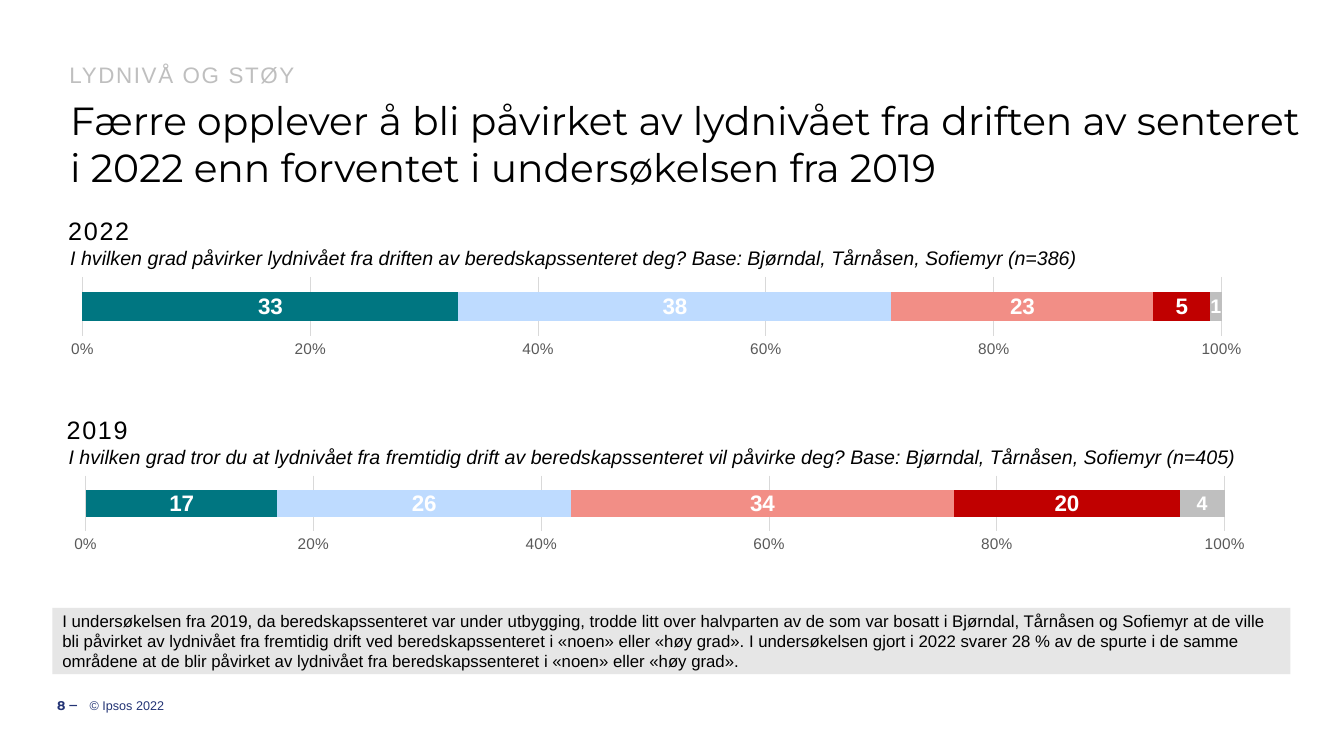
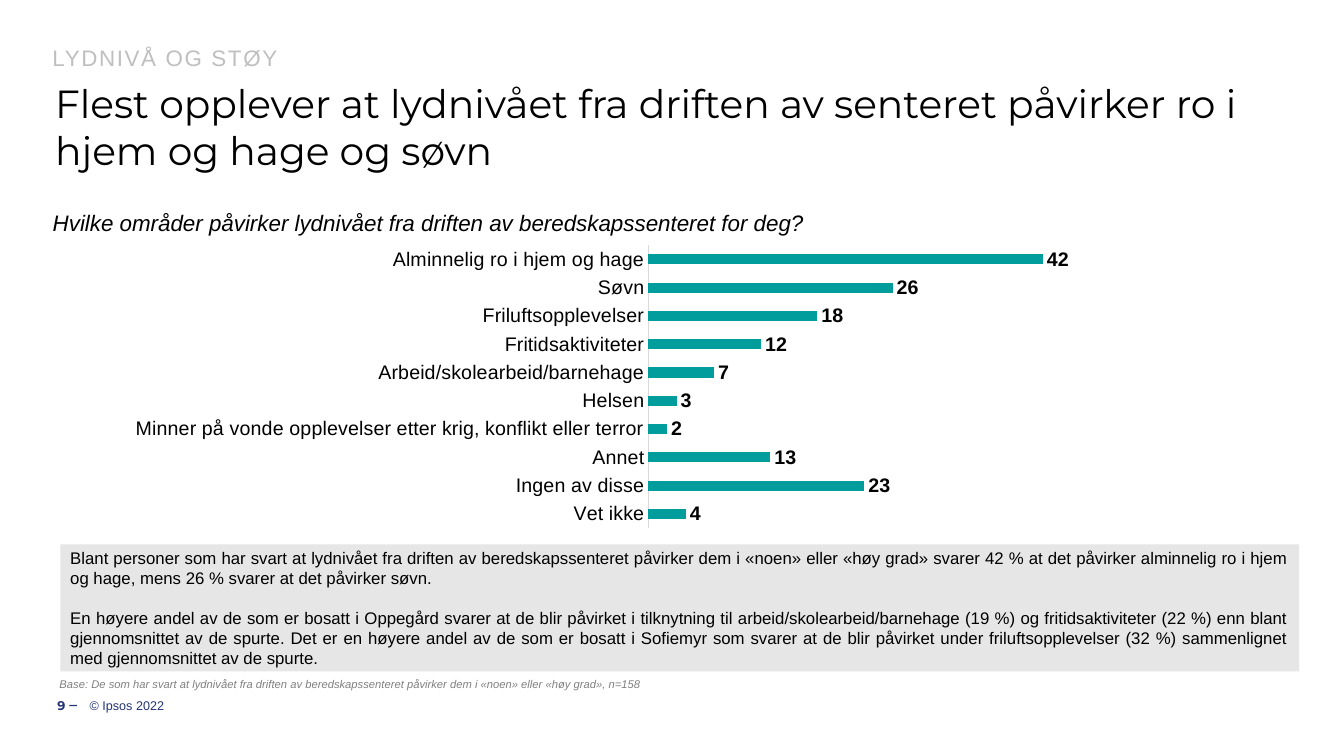
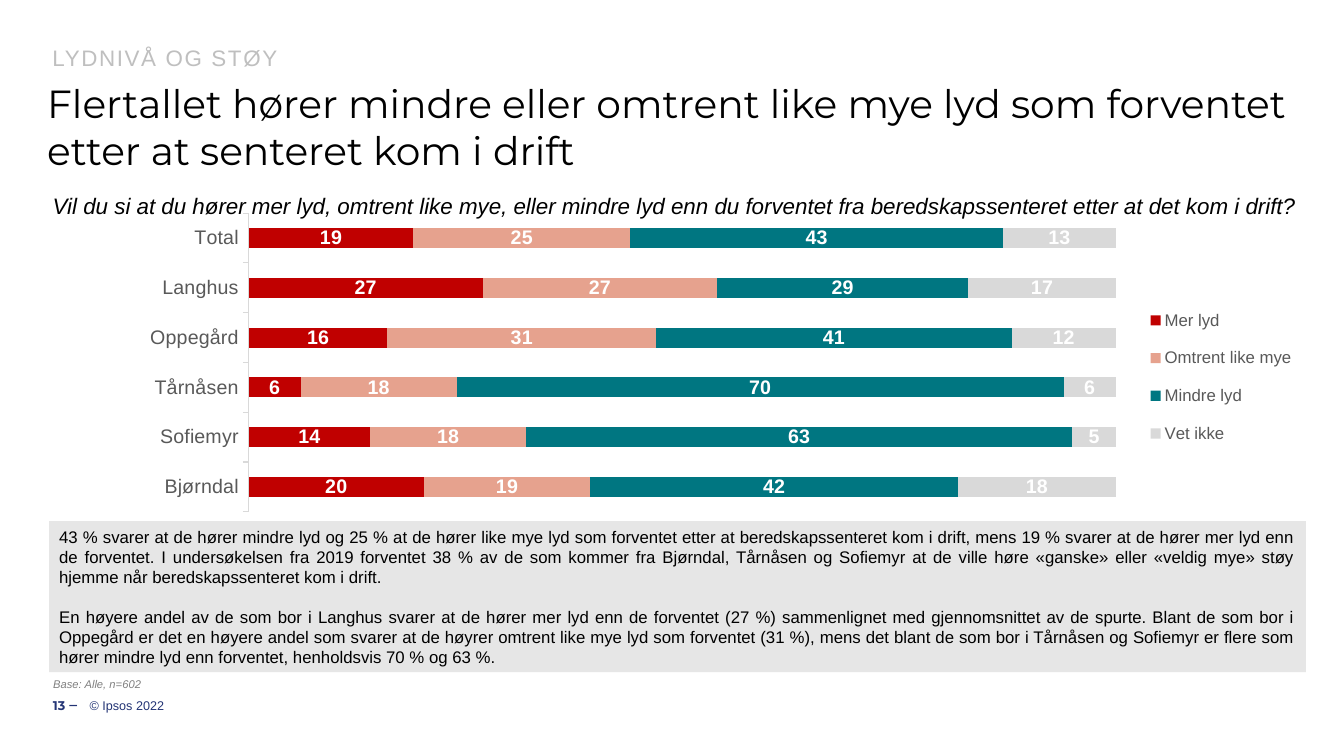
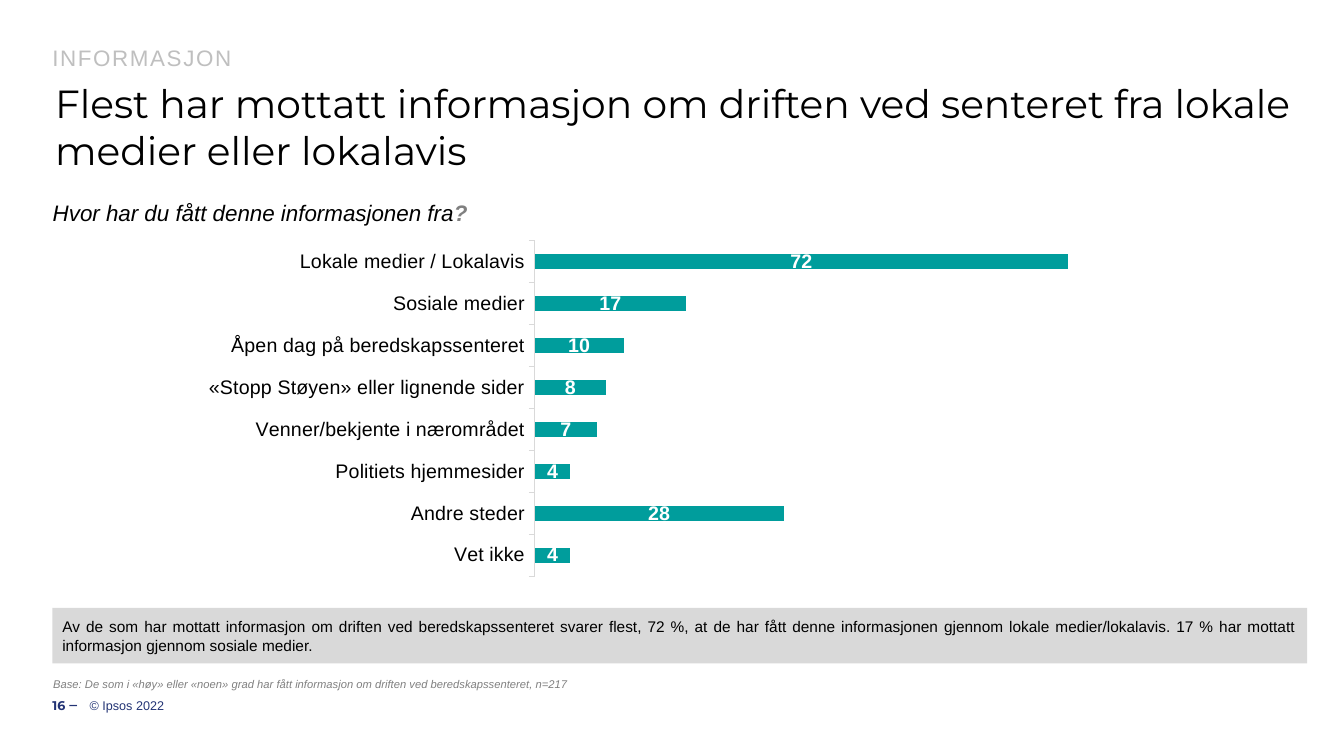
import pptx
import pptx.chart.data
import pptx.dml.color
import pptx.enum.chart
import pptx.enum.shapes
import pptx.enum.text
import pptx.oxml
import pptx.oxml.ns
import pptx.util

Cm = pptx.util.Cm
Pt = pptx.util.Pt
ALIGN = pptx.enum.text.PP_ALIGN
ANCHOR = pptx.enum.text.MSO_ANCHOR
CHART = pptx.enum.chart.XL_CHART_TYPE
LABEL = pptx.enum.chart.XL_LABEL_POSITION
TICK = pptx.enum.chart.XL_TICK_MARK

SANS, DISPLAY = "Arial", "Montserrat"
BLACK, WHITE, NAVY = "000000", "FFFFFF", "233475"
TEAL, PETROL, RED = "009D9C", "007681", "C00000"
SKY, SALMON, PEACH = "BEDBFF", "F28E86", "E6A28E"
DARK, MID, SILVER, RULE, PALE = "595959", "808080", "BFBFBF", "D9D9D9", "E6E6E6"


def rgb(value):
    return pptx.dml.color.RGBColor.from_string(value)


def style(font, size, color=BLACK, name=SANS, bold=False, italic=False):
    font.size, font.name = Pt(size), name
    font.bold, font.italic = bold, italic
    font.color.rgb = rgb(color)


def lengths(box):
    return [Cm(v) for v in box]


def fill_frame(sp, paragraphs, inset=0.25, anchor=ANCHOR.TOP,
               align=ALIGN.LEFT, gap=0, **font):
    tf = sp.text_frame
    tf.word_wrap = True
    tf.auto_size = pptx.enum.text.MSO_AUTO_SIZE.NONE
    tf.vertical_anchor = anchor
    tf.margin_left = tf.margin_right = Cm(inset)
    tf.margin_top = tf.margin_bottom = Cm(0.13)
    for i, text in enumerate(paragraphs):
        p = tf.add_paragraph() if i else tf.paragraphs[0]
        p.text = text
        p.alignment = align
        if i:
            p.space_before = Pt(gap)
        style(p.runs[0].font, **font)
    return tf.paragraphs[0]


def add_text(s, box, text, **options):
    return fill_frame(s.shapes.add_textbox(*lengths(box)), [text], **options)


def spaced_heading(s, box, text, size, color=BLACK):
    """Letter-spaced line, used above titles and panels."""
    p = add_text(s, box, text, inset=0.2, size=size, color=color)
    p.line_spacing = 0.9
    p.runs[0].font._element.set("spc", "120")


def header(s, x, y, kicker, title, title_x):
    spaced_heading(s, (x, y, 31.6, 0.86), kicker, 16, SILVER)
    sp = s.shapes.title
    sp.left, sp.top, sp.width, sp.height = lengths((title_x, y + 0.8, 31.8, 2.64))
    p = fill_frame(sp, [title], size=28, name=DISPLAY)
    p.line_spacing = 1.0


def footer(s, number):
    y, h = 17.27, 1.02
    add_text(s, (1.07, y, 0.89, h), f"{number} ‒", inset=0, anchor=ANCHOR.MIDDLE,
             align=ALIGN.RIGHT, size=9, color=NAVY, name=DISPLAY, bold=True)
    add_text(s, (2.26, y, 29.03, h), "© Ipsos 2022", inset=0,
             anchor=ANCHOR.MIDDLE, size=9, color=NAVY)


def question(s, y, text):
    return add_text(s, (1.13, y, 32.4, 0.9), text, inset=0.2, size=16, italic=True)


def base_note(s, x, text):
    add_text(s, (x, 16.92, 31.85, 0.61), text, inset=0.2, anchor=ANCHOR.BOTTOM,
             size=8, color=MID, italic=True)


def comment(s, box, paragraphs, size=12, fill=PALE, align=ALIGN.JUSTIFY):
    sp = s.shapes.add_shape(pptx.enum.shapes.MSO_SHAPE.RECTANGLE, *lengths(box))
    sp.shadow.inherit = False
    sp.fill.solid()
    sp.fill.fore_color.rgb = rgb(fill)
    sp.line.fill.background()
    fill_frame(sp, paragraphs, anchor=ANCHOR.MIDDLE, align=align, gap=14, size=size)


def set_layout(parent, index, part, box, target=""):
    """Fix a chart part at a place given in slide centimetres."""
    for old in parent.xpath("c:layout"):
        parent.remove(old)
    x, y, w, h = box
    shares = {"x": (part[0] - x) / w, "y": (part[1] - y) / h,
              "w": part[2] / w, "h": part[3] / h}
    modes = '<c:xMode val="edge"/><c:yMode val="edge"/>'
    values = "".join(f'<c:{k} val="{v:.4f}"/>' for k, v in shares.items())
    parent.insert(index, pptx.oxml.parse_xml(
        f'<c:layout {pptx.oxml.ns.nsdecls("c")}><c:manualLayout>'
        f'{target}{modes}{values}</c:manualLayout></c:layout>'))


def bar_chart(s, box, plot_box, kind, cats, series, gap, label_size=14,
              label_color=WHITE, label_pos=LABEL.CENTER):
    """Bar chart; series holds (name, values, colour) tuples."""
    data = pptx.chart.data.CategoryChartData()
    data.categories = cats
    for name, values, _ in series:
        data.add_series(name, values)
    chart = s.shapes.add_chart(kind, *lengths(box), data).chart
    chart.has_title = chart.has_legend = False
    style(chart.font, 10)
    plot = chart.plots[0]
    plot.gap_width = gap
    plot.vary_by_categories = False
    if kind != CHART.BAR_CLUSTERED:
        plot.overlap = 100
    for ser, (_, _, color) in zip(plot.series, series):
        ser.format.fill.solid()
        ser.format.fill.fore_color.rgb = rgb(color)
        labels = ser.data_labels
        labels.show_value = True
        labels.position = label_pos
        style(labels.font, label_size, label_color, bold=True)
    chart.value_axis.has_major_gridlines = False
    set_layout(chart.element.xpath("c:chart/c:plotArea")[0], 0, plot_box, box,
               '<c:layoutTarget val="inner"/>')
    return chart


def category_axis(chart, color=BLACK, tick=TICK.OUTSIDE):
    """Show the categories and hide the value axis."""
    chart.value_axis.visible = False
    axis = chart.category_axis
    axis.major_tick_mark, axis.minor_tick_mark = tick, TICK.NONE
    axis.format.line.color.rgb = rgb(RULE)
    axis.format.line.width = Pt(0.75)
    style(axis.tick_labels.font, 14, color)


def limit_values(chart):
    axis = chart.value_axis
    axis.minimum_scale, axis.maximum_scale, axis.major_unit = 0, 60, 20


def percent_axis(chart):
    """Show the value axis in percent and hide the categories."""
    chart.category_axis.visible = False
    axis = chart.value_axis
    axis.major_unit = 0.2
    axis.major_tick_mark = axis.minor_tick_mark = TICK.NONE
    axis.format.line.fill.background()
    axis.has_major_gridlines = True
    axis.major_gridlines.format.line.color.rgb = rgb(RULE)
    axis.major_gridlines.format.line.width = Pt(0.75)
    axis.tick_labels.number_format = "0%"
    axis.tick_labels.number_format_is_linked = False
    style(axis.tick_labels.font, 11, DARK)


def right_legend(chart, legend_box, box):
    chart.has_legend = True
    legend = chart.legend
    legend.position = pptx.enum.chart.XL_LEGEND_POSITION.RIGHT
    legend.include_in_layout = False
    style(legend.font, 12, DARK)
    set_layout(legend._element, 1, legend_box, box)


def year_panel(s, box, year, text, values, plot_x, plot_h):
    x, y, w, h = box
    spaced_heading(s, (x, y, w, 0.94), year, 18)
    add_text(s, (x, y + 0.69, w, 0.86), text, size=14, italic=True)
    grades = ["Ingen grad", "Liten grad", "Noen grad", "Høy grad", "Vet ikke"]
    colors = [PETROL, SKY, SALMON, RED, SILVER]
    series = [(g, [v], c) for g, v, c in zip(grades, values, colors)]
    chart = bar_chart(s, (x, y + 1.5, w, h - 1.5), (plot_x, y + 1.6, 28.71, plot_h),
                      CHART.BAR_STACKED_100, ["1"], series, 104, label_size=16)
    percent_axis(chart)
    chart.plots[0].series[4].data_labels.font.size = Pt(14)


def noise_level(s):
    header(s, 1.55, 1.5, "LYDNIVÅ OG STØY",
           "Færre opplever å bli påvirket av lydnivået fra driften av senteret "
           "i 2022 enn forventet i undersøkelsen fra 2019", 1.52)
    year_panel(s, (1.52, 5.38, 31.6, 4.6), "2022",
               "I hvilken grad påvirker lydnivået fra driften av beredskapssenteret deg? "
               "Base: Bjørndal, Tårnåsen, Sofiemyr (n=386)",
               [33, 38, 23, 5, 1], 2.08, 1.48)
    year_panel(s, (1.48, 10.39, 31.6, 4.6), "2019",
               "I hvilken grad tror du at lydnivået fra fremtidig drift av "
               "beredskapssenteret vil påvirke deg? "
               "Base: Bjørndal, Tårnåsen, Sofiemyr (n=405)",
               [17, 26, 34, 20, 4], 2.16, 1.39)
    comment(s, (1.32, 15.32, 31.2, 1.67), [
        "I undersøkelsen fra 2019, da beredskapssenteret var under utbygging, trodde "
        "litt over halvparten av de som var bosatt i Bjørndal, Tårnåsen og Sofiemyr at "
        "de ville bli påvirket av lydnivået fra fremtidig drift ved beredskapssenteret "
        "i «noen» eller «høy grad». I undersøkelsen gjort i 2022 svarer 28 % av de "
        "spurte i de samme områdene at de blir påvirket av lydnivået fra "
        "beredskapssenteret i «noen» eller «høy grad»."], align=ALIGN.LEFT)


def affected_areas(s):
    header(s, 1.12, 1.07, "LYDNIVÅ OG STØY",
           "Flest opplever at lydnivået fra driften av senteret påvirker ro i "
           "hjem og hage og søvn", 1.14)
    question(s, 5.13, "Hvilke områder påvirker lydnivået fra driften av "
                      "beredskapssenteret for deg?")
    areas = {"Vet ikke": 4, "Ingen av disse": 23, "Annet": 13,
             "Minner på vonde opplevelser etter krig, konflikt eller terror": 2,
             "Helsen": 3, "Arbeid/skolearbeid/barnehage": 7,
             "Fritidsaktiviteter": 12, "Friluftsopplevelser": 18,
             "Søvn": 26, "Alminnelig ro i hjem og hage": 42}
    chart = bar_chart(s, (1, 5.92, 29.76, 8.05), (16.34, 6.18, 14.2, 7.13),
                      CHART.BAR_CLUSTERED, list(areas),
                      [("Series 1", list(areas.values()), TEAL)], 182,
                      label_color=BLACK, label_pos=LABEL.OUTSIDE_END)
    category_axis(chart, tick=TICK.NONE)
    limit_values(chart)
    comment(s, (1.52, 13.72, 31.22, 3.2), [
        "Blant personer som har svart at lydnivået fra driften av beredskapssenteret "
        "påvirker dem i «noen» eller «høy grad» svarer 42 % at det påvirker alminnelig "
        "ro i hjem og hage, mens 26 % svarer at det påvirker søvn.",
        "En høyere andel av de som er bosatt i Oppegård svarer at de blir påvirket i "
        "tilknytning til arbeid/skolearbeid/barnehage (19 %) og fritidsaktiviteter "
        "(22 %) enn blant gjennomsnittet av de spurte. Det er en høyere andel av de som "
        "er bosatt i Sofiemyr som svarer at de blir påvirket under friluftsopplevelser "
        "(32 %) sammenlignet med gjennomsnittet av de spurte."])
    base_note(s, 1.3, "Base: De som har svart at lydnivået fra driften av "
                      "beredskapssenteret påvirker dem i «noen» eller «høy grad», n=158")


def expected_noise(s):
    header(s, 1.12, 1.07, "LYDNIVÅ OG STØY",
           "Flertallet hører mindre eller omtrent like mye lyd som forventet "
           "etter at senteret kom i drift", 0.94)
    question(s, 4.72, "Vil du si at du hører mer lyd, omtrent like mye, eller mindre lyd "
                      "enn du forventet fra beredskapssenteret etter at det kom i drift?")
    comment(s, (1.24, 13.13, 31.67, 3.81), [
        "43 % svarer at de hører mindre lyd og 25 % at de hører like mye lyd som "
        "forventet etter at beredskapssenteret kom i drift, mens 19 % svarer at de "
        "hører mer lyd enn de forventet. I undersøkelsen fra 2019 forventet 38 % av de "
        "som kommer fra Bjørndal, Tårnåsen og Sofiemyr at de ville høre «ganske» eller "
        "«veldig mye» støy hjemme når beredskapssenteret kom i drift.",
        "En høyere andel av de som bor i Langhus svarer at de hører mer lyd enn de "
        "forventet (27 %) sammenlignet med gjennomsnittet av de spurte. Blant de som "
        "bor i Oppegård er det en høyere andel som svarer at de høyrer omtrent like mye "
        "lyd som forventet (31 %), mens det blant de som bor i Tårnåsen og Sofiemyr er "
        "flere som hører mindre lyd enn forventet, henholdsvis 70 % og 63 %."])
    box = (3.2, 5.23, 29.54, 7.82)
    chart = bar_chart(s, box, (6.27, 5.37, 21.85, 7.53), CHART.BAR_STACKED_100,
                      ["Bjørndal", "Sofiemyr", "Tårnåsen", "Oppegård", "Langhus", "Total"],
                      [("Mer lyd", [20, 14, 6, 16, 27, 19], RED),
                       ("Omtrent like mye", [19, 18, 18, 31, 27, 25], PEACH),
                       ("Mindre lyd", [42, 63, 70, 41, 29, 43], PETROL),
                       ("Vet ikke", [18, 5, 6, 12, 17, 13], RULE)], 150)
    category_axis(chart, DARK)
    right_legend(chart, (28.85, 7.35, 3.85, 4.3), box)
    base_note(s, 1.14, "Base: Alle, n=602")


def information_sources(s):
    header(s, 1.12, 1.07, "INFORMASJON",
           "Flest har mottatt informasjon om driften ved senteret fra lokale "
           "medier eller lokalavis", 1.14)
    p = question(s, 4.9, "Hvor har du fått denne informasjonen fra")
    r = p.add_run()
    r.text = "?"
    style(r.font, 16, MID, bold=True, italic=True)
    sources = {"Vet ikke": 4, "Andre steder": 28, "Politiets hjemmesider": 4,
               "Venner/bekjente i nærområdet": 7,
               "«Stopp Støyen» eller lignende sider": 8,
               "Åpen dag på beredskapssenteret": 10, "Sosiale medier": 17,
               "Lokale medier / Lokalavis": 72}
    chart = bar_chart(s, (3.94, 5.33, 23.39, 9.78), (13.48, 6.07, 13.43, 8.45),
                      CHART.BAR_STACKED, list(sources),
                      [("Series 1", list(sources.values()), TEAL)], 182)
    category_axis(chart)
    limit_values(chart)
    comment(s, (1.32, 15.32, 31.62, 1.4), [
        "Av de som har mottatt informasjon om driften ved beredskapssenteret svarer "
        "flest, 72 %, at de har fått denne informasjonen gjennom lokale "
        "medier/lokalavis. 17 % har mottatt informasjon gjennom sosiale medier."],
        size=11, fill=RULE)
    base_note(s, 1.14, "Base: De som i «høy» eller «noen» grad har fått informasjon om "
                       "driften ved beredskapssenteret, n=217")


def main():
    prs = pptx.Presentation()
    prs.slide_width, prs.slide_height = Cm(33.87), Cm(19.05)
    pages = {8: noise_level, 9: affected_areas,
             13: expected_noise, 16: information_sources}
    for number, build in pages.items():
        s = prs.slides.add_slide(prs.slide_layouts[5])
        build(s)
        footer(s, number)
    prs.save("out.pptx")


if __name__ == "__main__":
    main()
